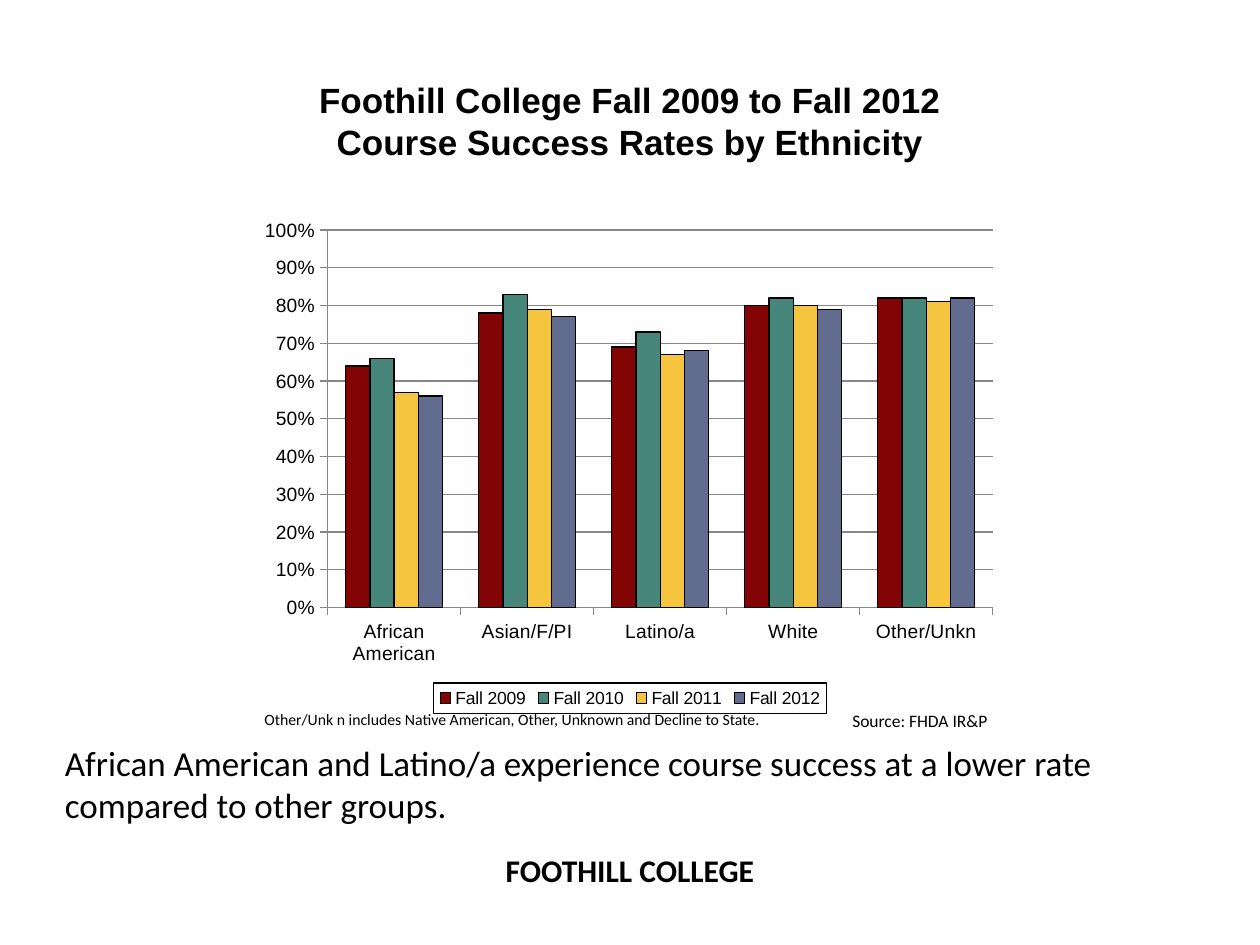
"""Build a slide charting course success rates by ethnicity."""
from pptx import Presentation
from pptx.chart.data import CategoryChartData
from pptx.dml.color import RGBColor
from pptx.enum.chart import XL_CHART_TYPE, XL_LEGEND_POSITION, XL_TICK_MARK
from pptx.enum.text import MSO_ANCHOR, PP_ALIGN
from pptx.oxml import parse_xml
from pptx.oxml.ns import nsdecls, qn
from pptx.util import Pt

LEFT, CENTER = PP_ALIGN.LEFT, PP_ALIGN.CENTER
BLACK, GRID_GRAY = "000000", "878787"

TEXTS = [
    (["Foothill College Fall 2009 to Fall 2012", "Course Success Rates by Ethnicity"],
     (0, 24, 720, 90), "Arial", 20, True, CENTER, MSO_ANCHOR.MIDDLE),
    (["African American and Latino/a experience course success at a lower rate "
      "compared to other groups."],
     (30, 420, 660, 55.75), "Calibri", 20, False, LEFT, MSO_ANCHOR.TOP),
    (["Source: FHDA IR&P"],
     (480, 402, 186, 19.4), "Calibri", 10, False, LEFT, MSO_ANCHOR.TOP),
    (["Other/Unk n includes Native American, Other, Unknown and Decline to State."],
     (144, 402, 324, 18), "Calibri", 9, False, LEFT, MSO_ANCHOR.TOP),
    (["FOOTHILL COLLEGE"],
     (36, 483, 648, 29), "Calibri", 18, True, CENTER, MSO_ANCHOR.TOP),
]
CATEGORIES = ["African American", "Asian/F/PI", "Latino/a", "White", "Other/Unkn"]
SERIES = [
    ("Fall 2009", "820404", (0.64, 0.78, 0.69, 0.80, 0.82)),
    ("Fall 2010", "46867B", (0.66, 0.83, 0.73, 0.82, 0.82)),
    ("Fall 2011", "F5C53F", (0.57, 0.79, 0.67, 0.80, 0.81)),
    ("Fall 2012", "616C8F", (0.56, 0.77, 0.68, 0.79, 0.82)),
]
CHART_BOX = (144, 120, 432, 288)
PLOT_LAYOUT = {"x": 0.1, "y": 0.04, "w": 0.88, "h": 0.75}
LEGEND_LAYOUT = {"x": 0.24, "y": 0.94, "w": 0.52, "h": 0.06}


def color(value):
    return RGBColor.from_string(value)


def style_font(font, name, size, bold=False):
    font.name, font.size, font.bold = name, Pt(size), bold
    font.color.rgb = color(BLACK)


def style_line(line, value):
    line.color.rgb = color(value)
    line.width = Pt(0.75)


def add_text(slide, lines, box, name, size, bold, alignment, anchor):
    frame = slide.shapes.add_textbox(*map(Pt, box)).text_frame
    frame.word_wrap = True
    frame.vertical_anchor = anchor
    paragraph = frame.paragraphs[0]
    paragraph.alignment = alignment
    for index, line in enumerate(lines):
        if index:
            paragraph.add_line_break()
        run = paragraph.add_run()
        run.text = line
        style_font(run.font, name, size, bold)


def set_layout(element, position, layout, target=""):
    for existing in element.findall(qn("c:layout")):
        element.remove(existing)
    modes = "".join(f'<c:{key}Mode val="edge"/>' for key in "xy")
    values = "".join(f'<c:{key} val="{value}"/>' for key, value in layout.items())
    element.insert(position, parse_xml(
        f'<c:layout {nsdecls("c")}><c:manualLayout>{target}{modes}{values}'
        "</c:manualLayout></c:layout>"))


def style_legend(chart):
    chart.has_legend = True
    legend = chart.legend
    legend.position = XL_LEGEND_POSITION.BOTTOM
    legend.include_in_layout = False
    style_font(legend.font, "Arial", 10)
    element = chart.element.find(".//" + qn("c:legend"))
    set_layout(element, 1, LEGEND_LAYOUT)
    element.find(qn("c:txPr")).addprevious(parse_xml(
        f'<c:spPr {nsdecls("c", "a")}><a:ln w="9525"><a:solidFill>'
        f'<a:srgbClr val="{BLACK}"/></a:solidFill></a:ln></c:spPr>'))


def add_rates_chart(slide):
    data = CategoryChartData(number_format="0%")
    data.categories = CATEGORIES
    for name, _, values in SERIES:
        data.add_series(name, values)
    chart = slide.shapes.add_chart(
        XL_CHART_TYPE.COLUMN_CLUSTERED, *map(Pt, CHART_BOX), data).chart
    chart.has_title = False
    style_font(chart.font, "Calibri", 10)

    plot = chart.plots[0]
    plot.gap_width, plot.overlap, plot.vary_by_categories = 150, 0, False
    for series, (_, fill, _) in zip(plot.series, SERIES):
        series.format.fill.solid()
        series.format.fill.fore_color.rgb = color(fill)
        style_line(series.format.line, BLACK)

    for axis in (chart.category_axis, chart.value_axis):
        axis.major_tick_mark = XL_TICK_MARK.OUTSIDE
        axis.minor_tick_mark = XL_TICK_MARK.NONE
        style_font(axis.tick_labels.font, "Arial", 11)
        style_line(axis.format.line, GRID_GRAY)
    rates = chart.value_axis
    rates.minimum_scale, rates.maximum_scale, rates.major_unit = 0, 1, 0.1
    rates.tick_labels.number_format = "0%"
    rates.tick_labels.number_format_is_linked = False
    rates.has_major_gridlines = True
    style_line(rates.major_gridlines.format.line, GRID_GRAY)

    set_layout(chart.element.find(".//" + qn("c:plotArea")), 0, PLOT_LAYOUT,
               '<c:layoutTarget val="inner"/>')
    style_legend(chart)


def main():
    presentation = Presentation()
    presentation.slide_width, presentation.slide_height = Pt(720), Pt(540)
    slide = presentation.slides.add_slide(presentation.slide_layouts[6])
    for text in TEXTS[:-1]:
        add_text(slide, *text)
    add_rates_chart(slide)
    add_text(slide, *TEXTS[-1])
    presentation.save("out.pptx")


if __name__ == "__main__":
    main()
